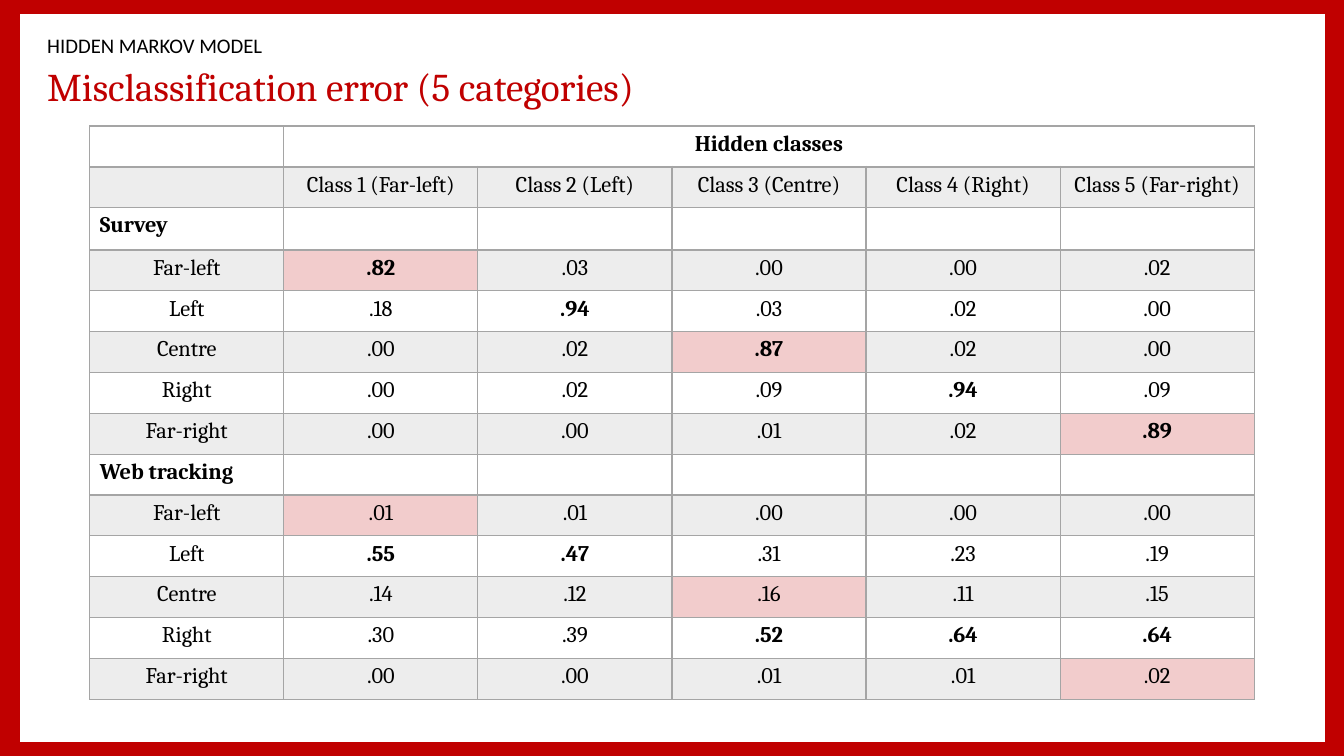
from lxml.etree import SubElement
from pptx import Presentation
from pptx.dml.color import RGBColor
from pptx.enum.shapes import MSO_SHAPE
from pptx.enum.text import MSO_ANCHOR, PP_ALIGN
from pptx.oxml.ns import qn
from pptx.util import Inches, Pt

RED = RGBColor(0xC0, 0x00, 0x00)
GREY = RGBColor(0xA5, 0xA5, 0xA5)
BLACK = RGBColor(0x00, 0x00, 0x00)
WHITE = RGBColor(0xFF, 0xFF, 0xFF)

SLIDE_W, SLIDE_H = 13.33, 7.5
CLASSES = ["Class 1 (Far-left)", "Class 2 (Left)", "Class 3 (Centre)",
           "Class 4 (Right)", "Class 5 (Far-right)"]
POSITIONS = ["Far-left", "Left", "Centre", "Right", "Far-right"]
SOURCES = {
    "Survey": [
        [".82", ".03", ".00", ".00", ".02"],
        [".18", ".94", ".03", ".02", ".00"],
        [".00", ".02", ".87", ".02", ".00"],
        [".00", ".02", ".09", ".94", ".09"],
        [".00", ".00", ".01", ".02", ".89"],
    ],
    "Web tracking": [
        [".01", ".01", ".00", ".00", ".00"],
        [".55", ".47", ".31", ".23", ".19"],
        [".14", ".12", ".16", ".11", ".15"],
        [".30", ".39", ".52", ".64", ".64"],
        [".00", ".00", ".01", ".01", ".02"],
    ],
}


def write(frame, text, size=16, font="Cambria", color=BLACK, bold=False,
          align=PP_ALIGN.CENTER, line_spacing=None):
    paragraph = frame.paragraphs[0]
    paragraph.alignment = align
    if line_spacing:
        paragraph.line_spacing = line_spacing
    run = paragraph.add_run()
    run.text = text
    run.font.size = Pt(size)
    run.font.name = font
    run.font.color.rgb = color
    run.font.bold = bold


def add_panel(slide, left, top, width, height, color):
    panel = slide.shapes.add_shape(MSO_SHAPE.RECTANGLE, Inches(left), Inches(top),
                                   Inches(width), Inches(height))
    panel.shadow.inherit = False
    panel.fill.solid()
    panel.fill.fore_color.rgb = color
    panel.line.fill.background()


def add_heading(slide, left, top, width, height, text, **text_format):
    heading = slide.shapes.add_textbox(Inches(left), Inches(top),
                                       Inches(width), Inches(height))
    frame = heading.text_frame
    frame.word_wrap = True
    frame.vertical_anchor = MSO_ANCHOR.MIDDLE
    write(frame, text, align=PP_ALIGN.LEFT, **text_format)


def style_cell(cell, tint=None, bottom=1):
    # Borders come before the fill in the cell properties
    properties = cell._tc.get_or_add_tcPr()
    for side, points in (("L", 1), ("R", 1), ("T", 1), ("B", bottom)):
        line = SubElement(properties, qn(f"a:ln{side}"), w=str(Pt(points)))
        line_fill = SubElement(line, qn("a:solidFill"))
        SubElement(line_fill, qn("a:srgbClr"), val=str(GREY))
    if tint is None:
        cell.fill.background()
        return
    cell.fill.solid()
    cell.fill.fore_color.rgb = tint
    tint_color = properties.find(qn("a:solidFill")).find(qn("a:srgbClr"))
    SubElement(tint_color, qn("a:alpha"), val="20000")


def add_error_table(slide, left, top, width, height):
    row_count = 2 + len(SOURCES) * (1 + len(POSITIONS))
    column_count = 1 + len(CLASSES)
    table = slide.shapes.add_table(row_count, column_count, Inches(left), Inches(top),
                                   Inches(width), Inches(height)).table
    table.first_row = False
    table.horz_banding = False
    for column in table.columns:
        column.width = Inches(width / column_count)
    survey_height = 0.42
    for row in table.rows:
        row.height = Inches((height - survey_height) / (row_count - 1))
    table.rows[2].height = Inches(survey_height)

    # Header rows
    table.cell(0, 1).merge(table.cell(0, column_count - 1))
    write(table.cell(0, 1).text_frame, "Hidden classes", bold=True)
    for c, name in enumerate(CLASSES, 1):
        write(table.cell(1, c).text_frame, name)

    # One block per data source; the largest share of each class is bold
    diagonal = set()
    first_row = 2
    for source, shares in SOURCES.items():
        write(table.cell(first_row, 0).text_frame, source, bold=True,
              align=PP_ALIGN.LEFT)
        largest = [max(column) for column in zip(*shares)]
        for r, (position, values) in enumerate(zip(POSITIONS, shares), 1):
            write(table.cell(first_row + r, 0).text_frame, position)
            diagonal.add((first_row + r, r))
            for c, value in enumerate(values, 1):
                write(table.cell(first_row + r, c).text_frame, value,
                      bold=value == largest[c - 1])
        first_row += 1 + len(POSITIONS)

    # Every second row is tinted, in red on the diagonal
    for r in range(row_count):
        for c in range(column_count):
            tint = None
            if r % 2:
                tint = RED if (r, c) in diagonal else GREY
            style_cell(table.cell(r, c), tint, bottom=1 if r else 2)


def main():
    prs = Presentation()
    prs.slide_width, prs.slide_height = Inches(SLIDE_W), Inches(SLIDE_H)
    slide = prs.slides.add_slide(prs.slide_layouts[6])

    # Red frame around a white page
    add_panel(slide, 0, 0, SLIDE_W, SLIDE_H, RED)
    add_panel(slide, 0.2, 0.14, 12.94, 7.22, WHITE)

    # Headings
    add_heading(slide, 0.37, 0.65, 11.67, 0.47, "Misclassification error (5 categories)",
                size=28, color=RED, line_spacing=0.9)
    add_heading(slide, 0.37, 0.32, 11.28, 0.31, "HIDDEN MARKOV MODEL",
                size=14.8, font="Calibri", line_spacing=0.8)

    add_error_table(slide, 0.89, 1.25, 11.55, 5.69)
    prs.save("out.pptx")


if __name__ == "__main__":
    main()
